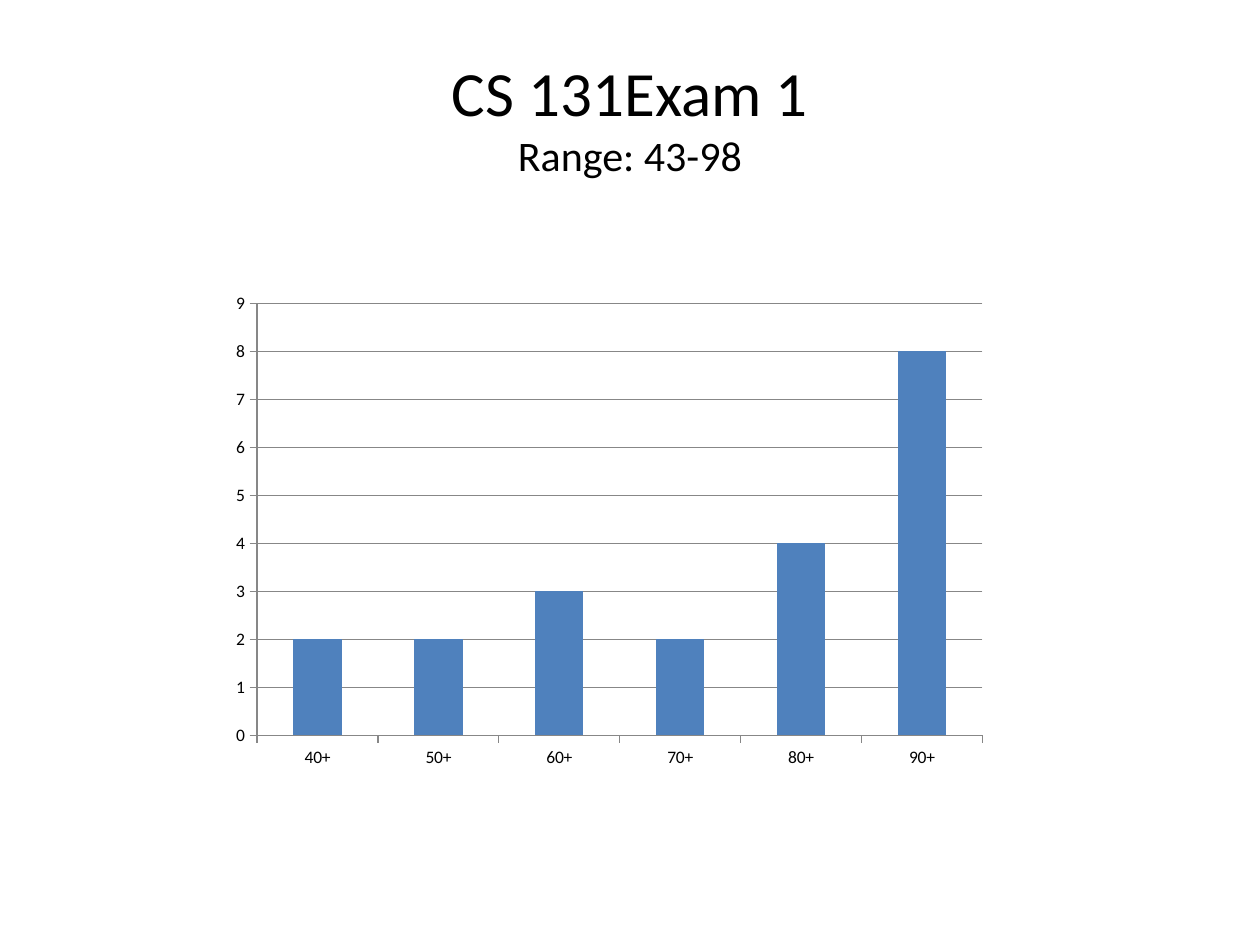
from pptx import Presentation
from pptx.chart.data import CategoryChartData
from pptx.dml.color import RGBColor
from pptx.enum.chart import XL_CHART_TYPE, XL_TICK_MARK
from pptx.enum.text import MSO_ANCHOR, PP_ALIGN
from pptx.util import Inches, Pt

COLORS = {"text": "000000", "bar": "4F81BD", "line": "878787"}
FONT = "Calibri"

deck = Presentation()
deck.slide_width, deck.slide_height = Inches(10), Inches(7.5)
W, H = deck.slide_width, deck.slide_height
slide = deck.slides.add_slide(deck.slide_layouts[5])

# Heading: exam name with the score range beneath it
heading = slide.shapes.title
heading.left, heading.top = int(W * 0.05), int(H * 0.04)
heading.width, heading.height = int(W * 0.9), int(H / 6)
heading.text_frame.vertical_anchor = MSO_ANCHOR.MIDDLE
heading_line = heading.text_frame.paragraphs[0]
heading_line.alignment = PP_ALIGN.CENTER
for wording, size in [("CS 131Exam 1", 36), ("Range: 43-98", 24)]:
    if heading_line.runs:
        heading_line.add_line_break()
    run = heading_line.add_run()
    run.text = wording
    run.font.name, run.font.size = FONT, Pt(size)
    run.font.color.rgb = RGBColor.from_string(COLORS["text"])

# Score distribution
scores = CategoryChartData()
scores.categories = [f"{low}+" for low in range(40, 100, 10)]
scores.add_series("Series 1", (2, 2, 3, 2, 4, 8))
histogram = slide.shapes.add_chart(
    XL_CHART_TYPE.COLUMN_CLUSTERED,
    int(W * 0.175), int(H * 0.3), Inches(6.17), Inches(3.92), scores,
).chart
histogram.has_legend = False
histogram.has_title = False
histogram.font.name, histogram.font.size = FONT, Pt(10)
histogram.font.color.rgb = RGBColor.from_string(COLORS["text"])

bars = histogram.plots[0]
bars.gap_width = 150
bars.vary_by_categories = False
bar_fill = bars.series[0].format.fill
bar_fill.solid()
bar_fill.fore_color.rgb = RGBColor.from_string(COLORS["bar"])

grades, counts = histogram.category_axis, histogram.value_axis
counts.minimum_scale, counts.maximum_scale, counts.major_unit = 0, 9, 1
counts.has_major_gridlines = True
for axis in (grades, counts):
    axis.major_tick_mark = XL_TICK_MARK.OUTSIDE
    axis.minor_tick_mark = XL_TICK_MARK.NONE
for ruled in (grades, counts, counts.major_gridlines):
    ruled.format.line.width = Pt(0.75)
    ruled.format.line.color.rgb = RGBColor.from_string(COLORS["line"])

deck.save("out.pptx")
